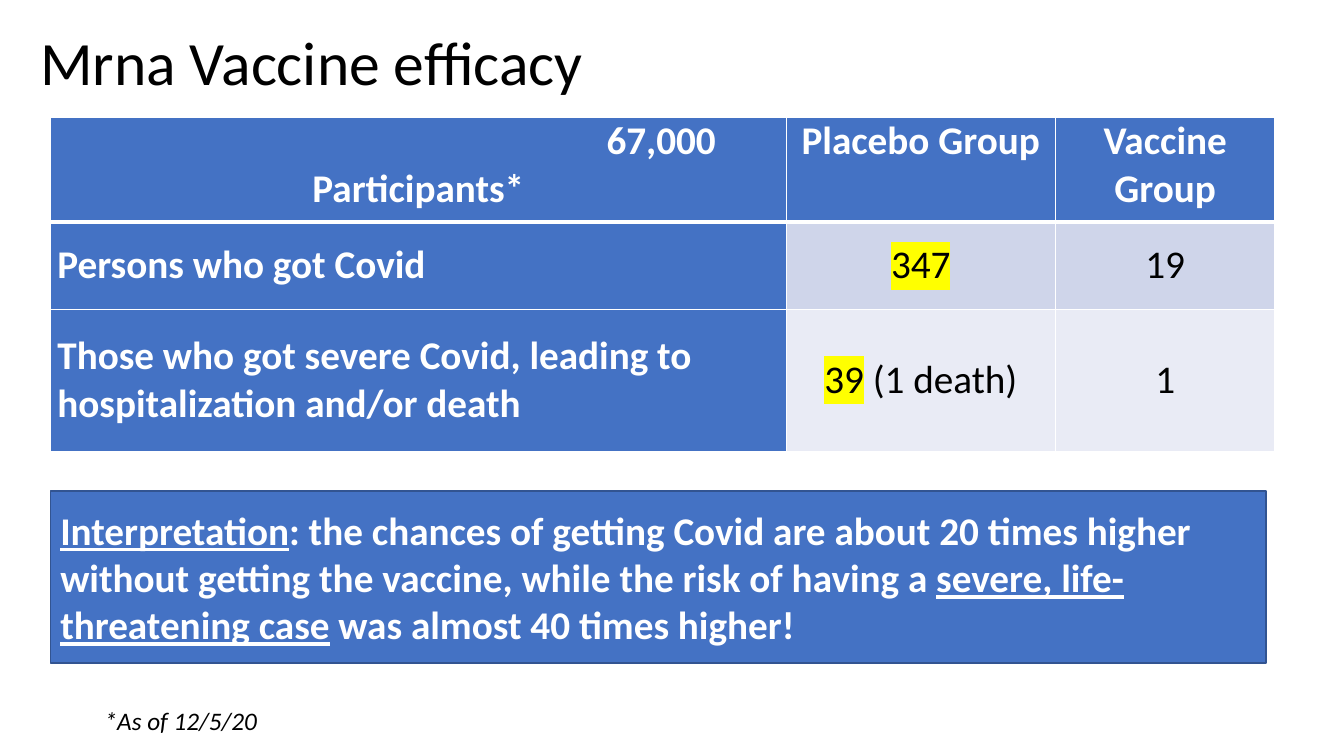
from lxml import etree
from pptx import Presentation
from pptx import util as u
from pptx.dml.color import RGBColor
from pptx.enum import shapes, text
from pptx.oxml import ns

COLORS = {
    "blue": "4472C4",
    "outline": "325491",
    "white": "FFFFFF",
    "black": "000000",
    "band_dark": "CFD5EA",
    "band_light": "E9EBF5",
    "marker": "FFFF00",
}
FONT = "Calibri"
BODY_SIZE = 28
CENTER = text.PP_ALIGN.CENTER
LEFT = text.PP_ALIGN.LEFT
MIDDLE = text.MSO_ANCHOR.MIDDLE
TOP = text.MSO_ANCHOR.TOP

COLUMN_WIDTHS = [525.6, 192.2, 157]
ROW_HEIGHTS = [74.9, 62.6, 101.5]
HEADINGS = ["67,000\nParticipants*", "Placebo Group", "Vaccine Group"]
RESULTS = [
    ("Persons who got Covid", "347", "", "19"),
    ("Those who got severe Covid, leading to hospitalization and/or death",
     "39", " (1 death)", "1"),
]
INTERPRETATION = [
    ("Interpretation", True),
    (": the chances of getting Covid are about 20 times higher without "
     "getting the vaccine, while the risk of having a ", False),
    ("severe, life-threatening case", True),
    (" was almost 40 times higher!", False),
]


def rgb(name):
    return RGBColor.from_string(COLORS[name])


def style_span(span, size, color, bold=False, italic=False, underline=False):
    font = span.font
    font.name = FONT
    font.size = u.Pt(size)
    font.bold = bold
    font.italic = italic
    font.underline = underline
    font.color.rgb = rgb(color)


def highlight(span):
    fill = span.font._element.find(ns.qn("a:solidFill"))
    marker = etree.Element(ns.qn("a:highlight"))
    etree.SubElement(marker, ns.qn("a:srgbClr"), val=COLORS["marker"])
    fill.addnext(marker)


def add_border(cell, side, width):
    properties = cell._tc.get_or_add_tcPr()
    line = etree.SubElement(properties, ns.qn(f"a:ln{side}"), w=str(u.Pt(width)))
    fill = etree.SubElement(line, ns.qn("a:solidFill"))
    etree.SubElement(fill, ns.qn("a:srgbClr"), val=COLORS["white"])


def fill_cell(cell, words, fill, color, bold, align, anchor, top=1, bottom=1):
    cell.margin_left = cell.margin_right = u.Pt(5)
    cell.margin_top = cell.margin_bottom = 0
    cell.vertical_anchor = anchor
    for side, width in (("L", 1), ("R", 1), ("T", top), ("B", bottom)):
        add_border(cell, side, width)
    cell.fill.solid()
    cell.fill.fore_color.rgb = rgb(fill)
    cell.text_frame.text = words
    for para in cell.text_frame.paragraphs:
        para.alignment = align
        for span in para.runs:
            style_span(span, BODY_SIZE, color, bold)


def add_plain_text(page, box, words, size, anchor=TOP, italic=False, spacing=1.0):
    frame = page.shapes.add_textbox(*map(u.Pt, box)).text_frame
    frame.word_wrap = True
    frame.vertical_anchor = anchor
    frame.text = words
    para = frame.paragraphs[0]
    para.line_spacing = spacing
    style_span(para.runs[0], size, "black", italic=italic)


def add_results_table(page, box):
    table = page.shapes.add_table(
        len(ROW_HEIGHTS), len(COLUMN_WIDTHS), *map(u.Pt, box)).table
    for column, width in zip(table.columns, COLUMN_WIDTHS):
        column.width = u.Pt(width)
    for row, height in zip(table.rows, ROW_HEIGHTS):
        row.height = u.Pt(height)

    for index, heading in enumerate(HEADINGS):
        fill_cell(table.cell(0, index), heading, "blue", "white", True,
                  CENTER, TOP, bottom=3)
    count_para = table.cell(0, 0).text_frame.paragraphs[0]
    count_para._p.get_or_add_pPr().set("marL", str(u.Pt(347)))

    bands = ("band_dark", "band_light")
    for index, (label, cases, note, vaccine) in enumerate(RESULTS, 1):
        band = bands[index - 1]
        top = 3 if index == 1 else 1
        fill_cell(table.cell(index, 0), label, "blue", "white", True,
                  LEFT, MIDDLE, top)
        placebo = table.cell(index, 1)
        fill_cell(placebo, cases, band, "black", False, CENTER, MIDDLE, top)
        para = placebo.text_frame.paragraphs[0]
        highlight(para.runs[0])
        if note:
            span = para.add_run()
            span.text = note
            style_span(span, BODY_SIZE, "black")
        fill_cell(table.cell(index, 2), vaccine, band, "black", False,
                  CENTER, MIDDLE, top)


def add_interpretation(page, box):
    panel = page.shapes.add_shape(shapes.MSO_SHAPE.RECTANGLE, *map(u.Pt, box))
    panel.shadow.inherit = False
    panel.fill.solid()
    panel.fill.fore_color.rgb = rgb("blue")
    panel.line.color.rgb = rgb("outline")
    panel.line.width = u.Pt(1)
    frame = panel.text_frame
    frame.word_wrap = True
    frame.vertical_anchor = MIDDLE
    para = frame.paragraphs[0]
    para.alignment = LEFT
    for words, underline in INTERPRETATION:
        span = para.add_run()
        span.text = words
        style_span(span, BODY_SIZE, "white", bold=True, underline=underline)


def main():
    deck = Presentation()
    deck.slide_width = u.Pt(960)
    deck.slide_height = u.Pt(540)
    page = deck.slides.add_slide(deck.slide_layouts[6])
    add_interpretation(page, (36, 350.6, 868.3, 123.1))
    add_plain_text(page, (21.6, 10.8, 923.8, 72.7), "Mrna Vaccine efficacy", 44,
                   anchor=MIDDLE, spacing=0.9)
    add_results_table(page, (36, 83.5, sum(COLUMN_WIDTHS), sum(ROW_HEIGHTS)))
    add_plain_text(page, (67.7, 500.4, 212.4, 28.8), "*As of 12/5/20", 18,
                   italic=True)
    deck.save("out.pptx")


if __name__ == "__main__":
    main()
